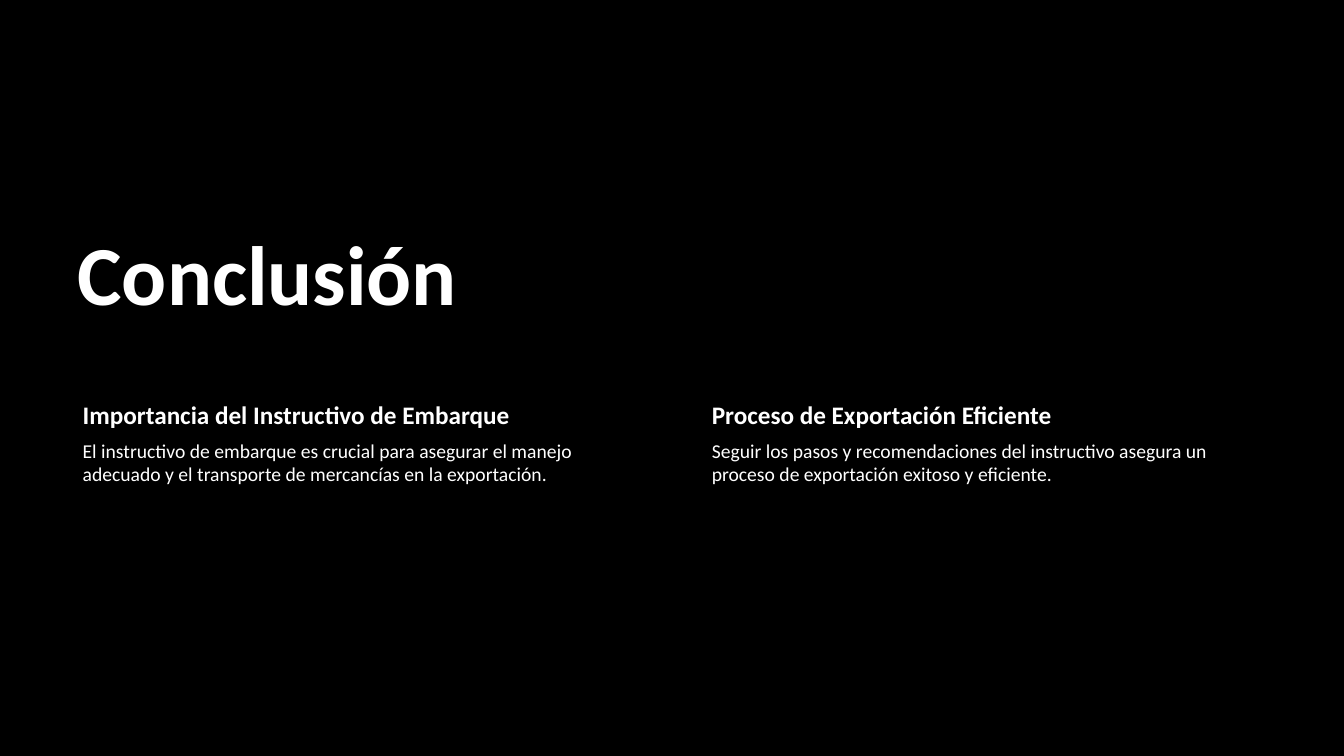
from pptx import Presentation
from pptx.dml.color import RGBColor
from pptx.enum.text import MSO_ANCHOR as Anchor
from pptx.util import Inches, Pt

FONT = "Calibri"
BLACK = "000000"
WHITE = "FFFFFF"
COLUMN_LEFT = 0.67
COLUMN_STEP = 6.24
COLUMN_WIDTH = 5.67
CONCLUSIONS = [
    ("Importancia del Instructivo de Embarque",
     "El instructivo de embarque es crucial para asegurar el manejo adecuado "
     "y el transporte de mercancías en la exportación."),
    ("Proceso de Exportación Eficiente",
     "Seguir los pasos y recomendaciones del instructivo asegura un proceso "
     "de exportación exitoso y eficiente."),
]


def rgb(value):
    return RGBColor.from_string(value)


def set_all(target, values):
    for name, value in values.items():
        setattr(target, name, value)


def add_text(s, text, box, size, bold=False, frame=None, spacing=1.0):
    tf = s.shapes.add_textbox(*map(Inches, box)).text_frame
    set_all(tf, {"word_wrap": True, **(frame or {})})
    p = tf.paragraphs[0]
    p.line_spacing = spacing
    r = p.add_run()
    r.text = text
    set_all(r.font, {"name": FONT, "size": Pt(size), "bold": bold})
    r.font.color.rgb = rgb(WHITE)


def insets(margin):
    frame = {f"margin_{side}": Inches(margin) for side in ("top", "right", "bottom")}
    return {"margin_left": Inches(0.15), **frame}


def add_conclusion(s, left, heading, body):
    add_text(s, heading, (left, 3.93, COLUMN_WIDTH, 0.4), 18, True, insets(0.03))
    add_text(s, body, (left, 4.33, COLUMN_WIDTH, 2.33), 14, frame=insets(0.02))


def main():
    prs = Presentation()
    set_all(prs, {"slide_width": Inches(13.33), "slide_height": Inches(7.5)})
    s = prs.slides.add_slide(prs.slide_layouts[6])
    s.background.fill.solid()
    s.background.fill.fore_color.rgb = rgb(BLACK)
    add_text(s, "Conclusión", (COLUMN_LEFT, 2.02, 8.03, 1.24), 60, True,
             {"vertical_anchor": Anchor.BOTTOM}, 0.9)
    for i, (heading, body) in enumerate(CONCLUSIONS):
        add_conclusion(s, COLUMN_LEFT + i * COLUMN_STEP, heading, body)
    prs.save("out.pptx")


if __name__ == "__main__":
    main()
